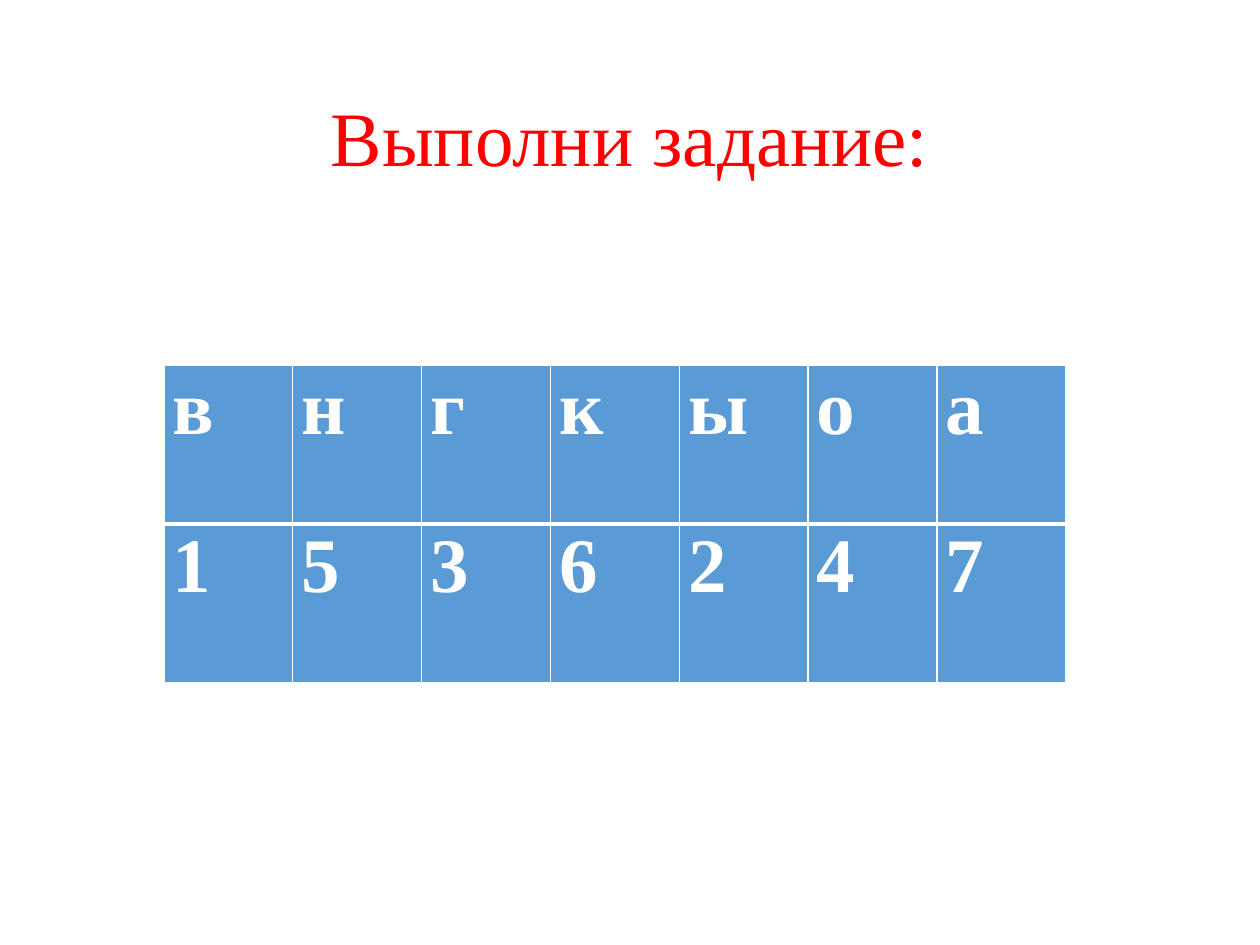
from typing import NamedTuple

import pptx
import pptx.dml.color
import pptx.enum.text
import pptx.oxml
import pptx.oxml.ns
import pptx.util
from pptx.util import Inches

RED = pptx.dml.color.RGBColor(0xFF, 0x00, 0x00)
WHITE = pptx.dml.color.RGBColor(0xFF, 0xFF, 0xFF)
BLUE = pptx.dml.color.RGBColor(0x5B, 0x9B, 0xD5)
FONT = "Times New Roman"
THIN, THICK = 1, 3


class PuzzleRow(NamedTuple):
    symbols: str
    top_border: int
    bottom_border: int


PUZZLE = [
    PuzzleRow("внгкыоа", THIN, THICK),
    PuzzleRow("1536247", THICK, THIN),
]


def write_text(frame, text: str, *, color, bold=False, size=44,
               align=None, spacing=None) -> None:
    paragraph = frame.paragraphs[0]
    paragraph.alignment = align
    paragraph.line_spacing = spacing
    run = paragraph.add_run()
    run.text = text
    run.font.name = FONT
    run.font.size = pptx.util.Pt(size)
    run.font.bold = bold
    run.font.color.rgb = color


def add_border(cell, side: str, points: int) -> None:
    cell._tc.get_or_add_tcPr().append(pptx.oxml.parse_xml(
        f'<a:{side} {pptx.oxml.ns.nsdecls("a")} w="{pptx.util.Pt(points)}">'
        f'<a:solidFill><a:srgbClr val="{WHITE}"/></a:solidFill></a:{side}>'))


def draw_cell(cell, symbol: str, row: PuzzleRow) -> None:
    cell.margin_left = cell.margin_right = Inches(0.07)
    cell.margin_top = cell.margin_bottom = 0
    add_border(cell, "lnL", THIN)
    add_border(cell, "lnR", THIN)
    add_border(cell, "lnT", row.top_border)
    add_border(cell, "lnB", row.bottom_border)
    cell.fill.solid()
    cell.fill.fore_color.rgb = BLUE
    write_text(cell.text_frame, symbol, color=WHITE, bold=True)


def draw_puzzle(slide, rows: list[PuzzleRow]) -> None:
    table = slide.shapes.add_table(
        len(rows), len(rows[0].symbols),
        Inches(1.3), Inches(2.9), Inches(7.16), Inches(2.52)).table
    for row_index, row in enumerate(rows):
        for column_index, symbol in enumerate(row.symbols):
            draw_cell(table.cell(row_index, column_index), symbol, row)


def main() -> None:
    presentation = pptx.Presentation()
    presentation.slide_width = Inches(10)
    presentation.slide_height = Inches(7.5)
    slide = presentation.slides.add_slide(presentation.slide_layouts[5])

    heading = slide.shapes.title
    heading.left, heading.top = Inches(0.69), Inches(0.4)
    heading.width, heading.height = Inches(8.62), Inches(1.45)
    heading.text_frame.vertical_anchor = pptx.enum.text.MSO_ANCHOR.MIDDLE
    write_text(heading.text_frame, "Выполни задание:", color=RED,
               align=pptx.enum.text.PP_ALIGN.CENTER, spacing=0.9)

    draw_puzzle(slide, PUZZLE)
    presentation.save("out.pptx")


if __name__ == "__main__":
    main()
